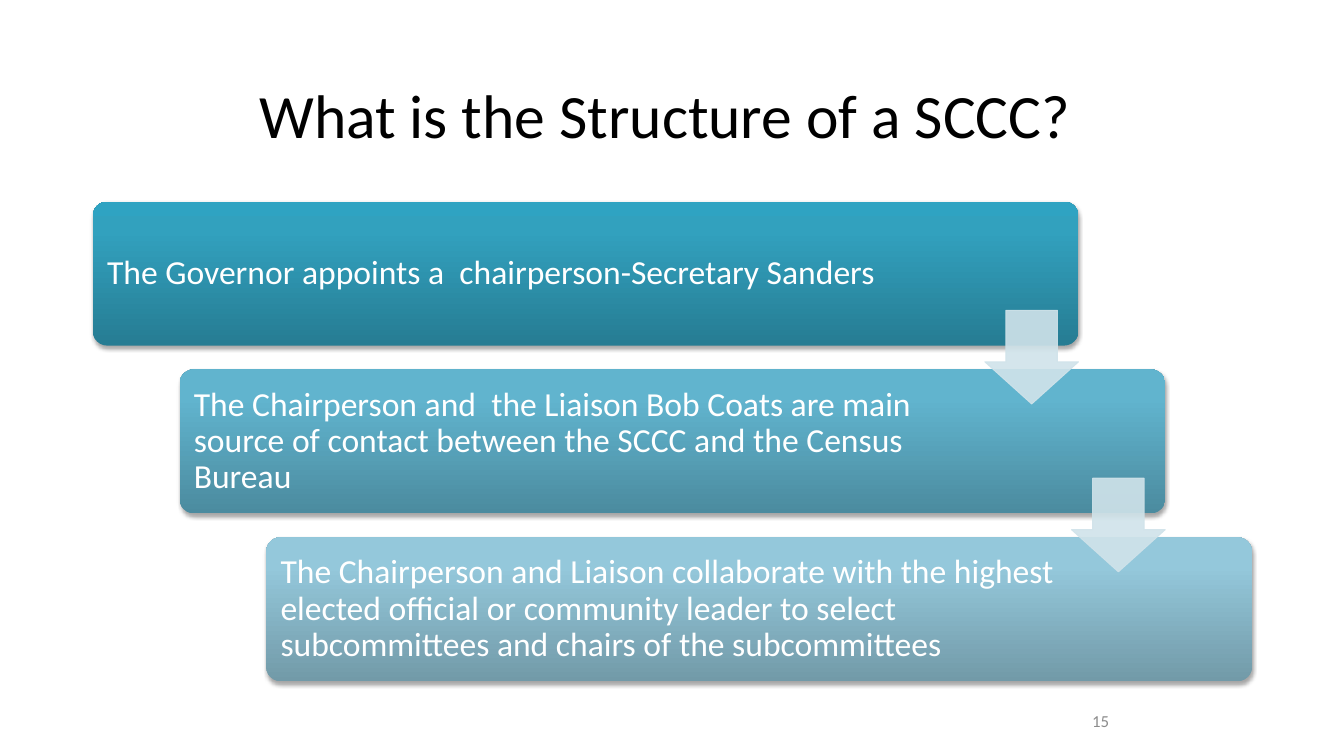
from lxml.etree import SubElement as Sub
from pptx import Presentation
from pptx.dml.color import RGBColor as RGB
from pptx.enum.shapes import MSO_SHAPE as Geo
from pptx.enum.text import MSO_ANCHOR as Anchor, MSO_AUTO_SIZE as Auto, PP_ALIGN as Align
from pptx.oxml.ns import qn
from pptx.util import Cm, Pt

BLACK = RGB(0x00, 0x00, 0x00)
WHITE = RGB(0xFF, 0xFF, 0xFF)
GREY = RGB(0x8C, 0x8C, 0x8C)
PALE = RGB(0xD0, 0xE3, 0xEA)
DEEP = (RGB(0x26, 0x7C, 0x93), RGB(0x32, 0xA1, 0xBE), RGB(0x2F, 0xA3, 0xC2))
MID = (RGB(0x4B, 0x8B, 0x9F), RGB(0x61, 0xB4, 0xCE), RGB(0x5F, 0xB6, 0xD1))
LIGHT = (RGB(0x72, 0x9A, 0xA8), RGB(0x94, 0xC8, 0xDB), RGB(0x93, 0xC9, 0xDD))
STOPS = (0, 80, 100)

STEPS = [
    ("The Governor appoints a  chairperson-Secretary Sanders", DEEP, 20.9),
    ("The Chairperson and  the Liaison Bob Coats are main source of contact "
     "between the SCCC and the Census Bureau", MID, 20.07),
    ("The Chairperson and Liaison collaborate with the highest elected official "
     "or community leader to select subcommittees and chairs of the subcommittees",
     LIGHT, 20.07),
]

FRAME = {"word_wrap": True, "auto_size": Auto.NONE, "vertical_anchor": Anchor.MIDDLE}
INSET = {"margin_" + side: Cm(0.25) for side in ("left", "top", "right", "bottom")}
HEAD = {"size": Pt(44), "name": "Calibri", "color": BLACK}
BODY = {"size": Pt(24), "name": "Calibri", "color": WHITE}
FOOT = {"size": Pt(12), "name": "Calibri", "color": GREY}


def apply(item, style):
    for key, value in style.items():
        if key == "color":
            item.color.rgb = value
        else:
            setattr(item, key, value)


def write(shape, text, style, para):
    frame = shape.text_frame
    apply(frame, FRAME | INSET)
    line = frame.paragraphs[0]
    line.text = text
    apply(line, para)
    apply(line.runs[0].font, style)


def tint(node, color, alpha=None):
    mark = Sub(node, qn("a:srgbClr"), val=str(color))
    if alpha:
        Sub(mark, qn("a:alpha"), val=str(alpha * 1000))


def shade(shape, colors):
    shape.fill.gradient()
    fill = shape._element.spPr.find(qn("a:gradFill"))
    for child in list(fill):
        fill.remove(child)
    stops = Sub(fill, qn("a:gsLst"))
    for place, color in zip(STOPS, colors):
        tint(Sub(stops, qn("a:gs"), pos=str(place * 1000)), color)
    Sub(fill, qn("a:lin"), ang="16200000", scaled="0")


def shadow(shape):
    shape.shadow.inherit = False
    cast = Sub(shape._element.spPr.find(qn("a:effectLst")), qn("a:outerShdw"),
               blurRad=str(Pt(3.15)), dist=str(Pt(1.8)), dir="5400000", rotWithShape="0")
    tint(cast, BLACK, 35)


def title(slide, box):
    head = slide.shapes.title
    apply(head, dict(zip(("left", "top", "width", "height"), box)))
    write(head, "What is the Structure of a SCCC? ", HEAD, {"alignment": Align.CENTER})


def card(slide, box, text, colors, span):
    left, top, width, height = box
    shape = slide.shapes.add_shape(Geo.ROUNDED_RECTANGLE, *box)
    shape.adjustments[0] = 0.1
    shape.line.fill.background()
    shade(shape, colors)
    shadow(shape)
    pad = Cm(0.11)
    label = slide.shapes.add_textbox(left + pad, top + pad, span, height - 2 * pad)
    write(label, text, BODY, {"alignment": Align.LEFT, "line_spacing": 0.9})


def arrow(slide, box):
    left, top, width, height = box
    size = Cm(2.36)
    shape = slide.shapes.add_shape(
        Geo.DOWN_ARROW, left + width - size, top + Cm(2.74), size, size)
    shape.adjustments[0] = 0.55
    shape.adjustments[1] = 0.45
    shape.shadow.inherit = False
    shape.line.width = Pt(0.75)
    for fill in (shape.fill, shape.line.fill):
        fill.solid()
        fill.fore_color.rgb = PALE
    for mark in shape._element.spPr.iter(qn("a:srgbClr")):
        Sub(mark, qn("a:alpha"), val="90000")


def stairs(slide, box):
    left, top, width, height = box
    wide, tall = Cm(24.84), Cm(3.63)
    count = len(STEPS) - 1
    across, down = (width - wide) // count, (height - tall) // count
    spots = [(left + i * across, top + i * down, wide, tall) for i in range(count + 1)]
    for spot, (text, colors, span) in zip(spots, STEPS):
        card(slide, spot, text, colors, Cm(span))
    for spot in spots[:-1]:
        arrow(slide, spot)


def number(slide, box):
    label = slide.shapes.add_textbox(*box)
    write(label, "15", FOOT, {"alignment": Align.CENTER})


def main():
    deck = Presentation()
    deck.slide_width, deck.slide_height = Cm(33.87), Cm(19.05)
    slide = deck.slides.add_slide(deck.slide_layouts[5])
    title(slide, (Cm(2.34), Cm(1.02), Cm(29.21), Cm(3.68)))
    stairs(slide, (Cm(2.34), Cm(5.08), Cm(29.21), Cm(12.09)))
    number(slide, (Cm(23.93), Cm(17.65), Cm(7.62), Cm(1.02)))
    deck.save("out.pptx")


if __name__ == "__main__":
    main()
